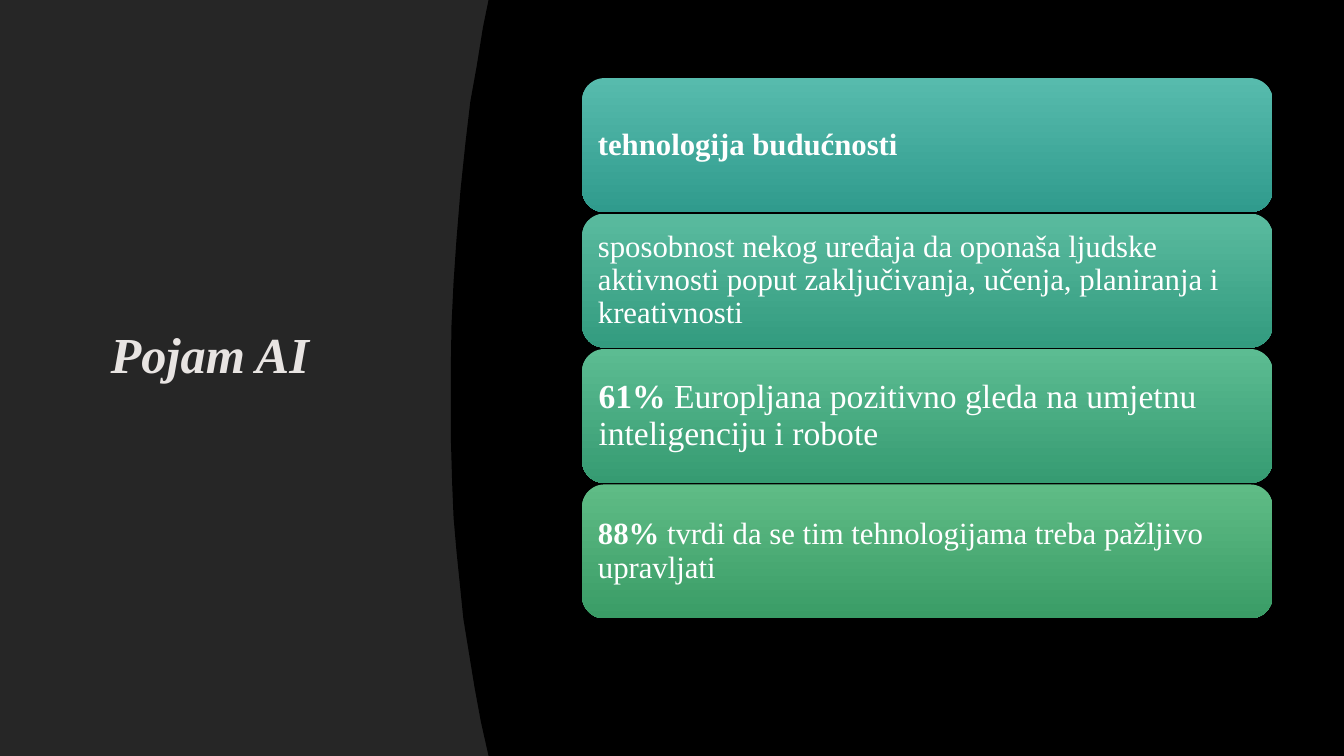
from dataclasses import dataclass

from lxml.etree import SubElement
from pptx import Presentation
from pptx.dml.color import RGBColor
from pptx.enum.shapes import MSO_SHAPE as Shape
from pptx.enum.text import MSO_ANCHOR as Anchor, PP_ALIGN as Align
from pptx.oxml.ns import qn
from pptx.slide import Slide
from pptx.text.text import TextFrame
from pptx.util import Pt

SLIDE_W, SLIDE_H = 960, 540
FONT = "Times New Roman"
BLACK = RGBColor(0x00, 0x00, 0x00)
CHARCOAL = RGBColor(0x26, 0x26, 0x26)
WHITE = RGBColor(0xFF, 0xFF, 0xFF)
TITLE_GREY = RGBColor(0xE8, 0xE4, 0xE2)

CARD_LEFT, CARD_TOP, CARD_W, CARD_H = 415.8, 55.8, 493.2, 95.7
CARD_PITCH = 96.75

# Left edge of the black panel, from top to bottom.
CURVE = [
    (349, 0), (345, 19.5), (340.5, 47.5), (336, 72.5), (332.5, 102),
    (329, 135.5), (326, 172), (324, 201.5), (322.5, 233), (322, 265.5),
    (322, 311), (323, 345.5), (324, 369.5), (326, 393), (328.5, 417.5),
    (331, 442), (335, 466.5), (339, 491), (343.5, 515.5), (349, SLIDE_H),
]


@dataclass
class Card:
    bold: str
    plain: str
    top_color: RGBColor
    bottom_color: RGBColor
    size: float = 22
    inset: float = 6.6


CARDS = [
    Card("tehnologija budućnosti", "",
         RGBColor(0x57, 0xBB, 0xAD), RGBColor(0x30, 0x9B, 0x8D)),
    Card("", "sposobnost nekog uređaja da oponaša ljudske aktivnosti poput "
         "zaključivanja, učenja, planiranja i kreativnosti",
         RGBColor(0x5A, 0xBB, 0x9F), RGBColor(0x33, 0x9B, 0x7F)),
    Card("61% ", "Europljana pozitivno gleda na umjetnu inteligenciju i robote",
         RGBColor(0x5C, 0xBC, 0x92), RGBColor(0x36, 0x9B, 0x72), 24, 7.2),
    Card("88% ", "tvrdi da se tim tehnologijama treba pažljivo upravljati",
         RGBColor(0x5F, 0xBC, 0x86), RGBColor(0x3A, 0x9C, 0x66)),
]


def start_paragraph(tf: TextFrame):
    """Prepare a wrapped, vertically centred frame and return its paragraph."""
    tf.word_wrap = True
    tf.vertical_anchor = Anchor.MIDDLE
    p = tf.paragraphs[0]
    p.alignment = Align.LEFT
    p.line_spacing = 0.9
    return p


def add_run(p, text: str, size: float, color: RGBColor, bold: bool):
    r = p.add_run()
    r.text = text
    r.font.name, r.font.size = FONT, Pt(size)
    r.font.bold = bold
    r.font.color.rgb = color
    return r


def add_background(slide: Slide) -> None:
    fill = slide.background.fill
    fill.solid()
    fill.fore_color.rgb = BLACK
    sp = slide.shapes.add_shape(Shape.RECTANGLE, 0, 0, Pt(SLIDE_W), Pt(SLIDE_H))
    builder = slide.shapes.build_freeform(Pt(SLIDE_W), 0)
    edge = [*CURVE, (SLIDE_W, SLIDE_H)]
    builder.add_line_segments([(Pt(x), Pt(y)) for x, y in edge], close=True)
    for shape, color in ((sp, CHARCOAL), (builder.convert_to_shape(), BLACK)):
        shape.shadow.inherit = False
        shape.fill.solid()
        shape.fill.fore_color.rgb = color
        shape.line.fill.background()


def add_title(slide: Slide, text: str) -> None:
    sp = slide.shapes.add_textbox(Pt(72), Pt(48), Pt(220), Pt(415))
    p = start_paragraph(sp.text_frame)
    r = add_run(p, text, 36, TITLE_GREY, True)
    r.font.italic = True
    effects = r.font.fill._xPr.makeelement(qn("a:effectLst"))
    r.font.fill._xPr.find(qn("a:solidFill")).addnext(effects)
    shadow = SubElement(effects, qn("a:outerShdw"), blurRad=str(Pt(3)),
                        dist=str(Pt(1)), dir="5400000")
    color = SubElement(shadow, qn("a:srgbClr"), val=str(BLACK))
    SubElement(color, qn("a:alpha"), val="60000")


def add_card(slide: Slide, card: Card, top: float) -> None:
    sp = slide.shapes.add_shape(Shape.ROUNDED_RECTANGLE, Pt(CARD_LEFT), Pt(top),
                                Pt(CARD_W), Pt(CARD_H))
    sp.shadow.inherit = False
    sp.line.fill.background()
    sp.fill.gradient()
    sp.fill.gradient_angle = 270
    stops = sp.fill.gradient_stops
    for stop, position, color in zip(stops, (0, 1), (card.top_color, card.bottom_color)):
        stop.position = position
        stop.color.rgb = color
    tf = sp.text_frame
    tf.margin_left = tf.margin_right = Pt(card.inset)
    tf.margin_top = tf.margin_bottom = Pt(card.inset)
    p = start_paragraph(tf)
    for text, bold in ((card.bold, True), (card.plain, False)):
        if text:
            add_run(p, text, card.size, WHITE, bold)


def main() -> None:
    prs = Presentation()
    prs.slide_width, prs.slide_height = Pt(SLIDE_W), Pt(SLIDE_H)
    slide = prs.slides.add_slide(prs.slide_layouts[6])
    add_background(slide)
    add_title(slide, "Pojam AI")
    for i, card in enumerate(CARDS):
        add_card(slide, card, CARD_TOP + i * CARD_PITCH)
    prs.save("out.pptx")


if __name__ == "__main__":
    main()
